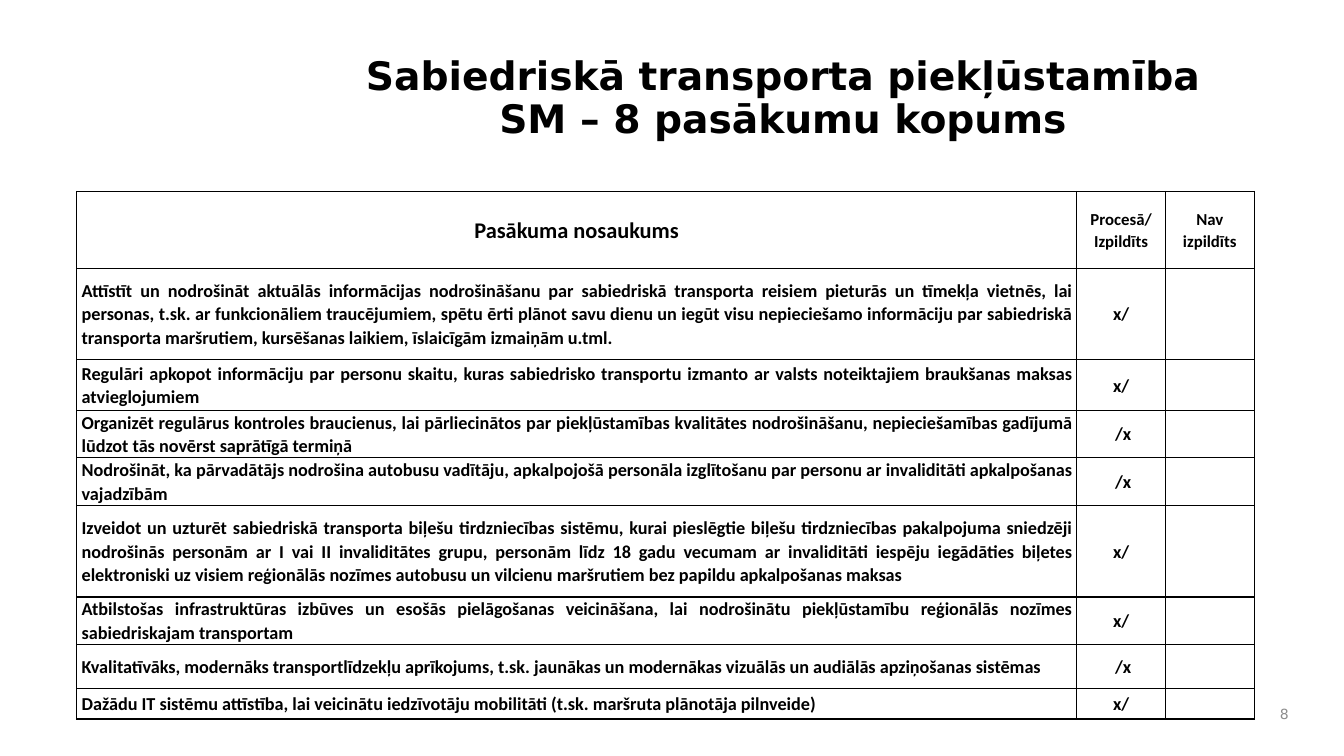
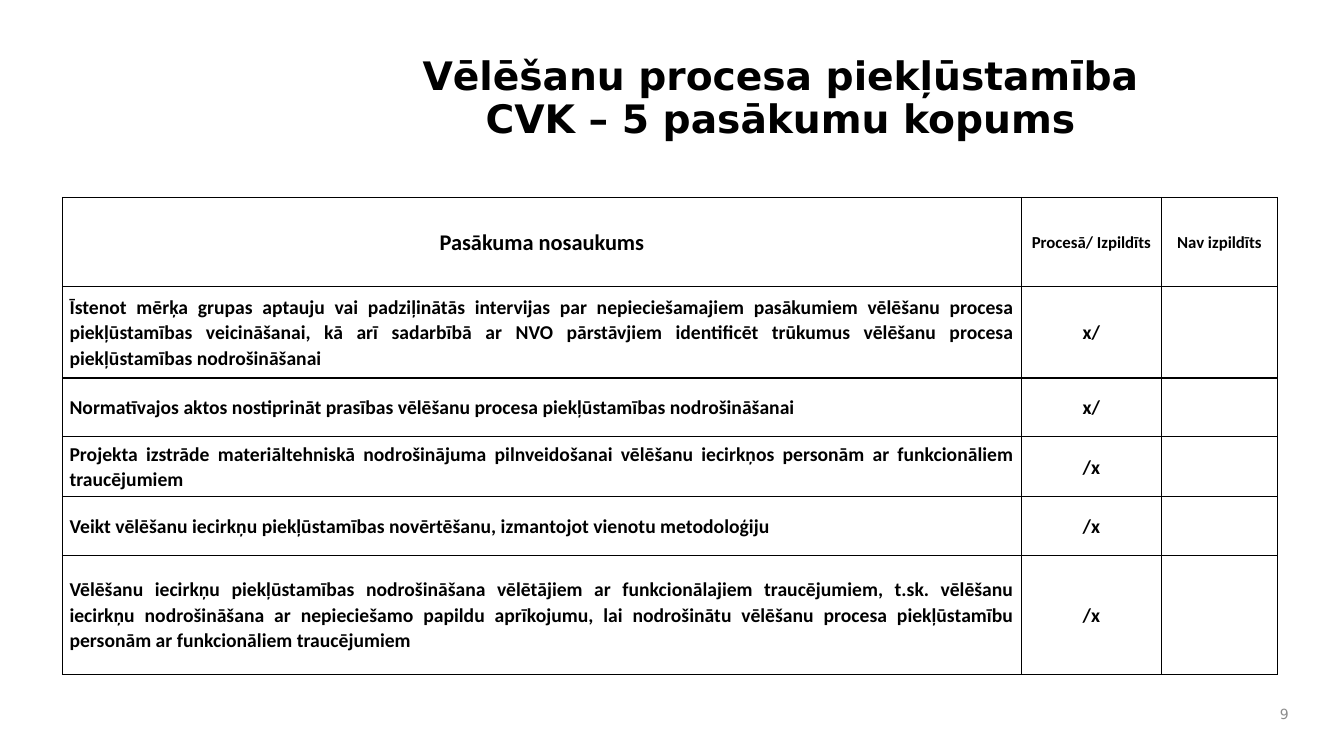
from lxml.etree import SubElement
from pptx import Presentation
from pptx.dml.color import RGBColor
from pptx.enum.text import MSO_ANCHOR as ANCHOR, MSO_AUTO_SIZE as AUTO, PP_ALIGN as ALIGN
from pptx.oxml.ns import qn
from pptx.util import Inches, Pt

BLACK, GRAY = "000000", "8C8C8C"
TITLE_FONT, TABLE_FONT = "DejaVu Sans", "Calibri"
HEADER = ("Pasākuma nosaukums", "Procesā/ Izpildīts", "Nav izpildīts")
HEADER_SIZES = (16, 12, 12)

SLIDES = [
    dict(
        number=8,
        title=("Sabiedriskā transporta piekļūstamība", "SM – 8 pasākumu kopums"),
        title_left=2.86, title_width=9.81,
        left=0.76, top=1.9, inset=0.05, size=13,
        cols=(9.92, 0.88, 0.88),
        heights=(0.76, 0.91, 0.5, 0.45, 0.45, 0.91, 0.46, 0.44, 0.3),
        rows=[
            ("Attīstīt un nodrošināt aktuālās informācijas nodrošināšanu par sabiedriskā transporta reisiem "
             "pieturās un tīmekļa vietnēs, lai personas, t.sk. ar funkcionāliem traucējumiem, spētu ērti plānot "
             "savu dienu un iegūt visu nepieciešamo informāciju par sabiedriskā transporta maršrutiem, "
             "kursēšanas laikiem, īslaicīgām izmaiņām u.tml.", "x/"),
            ("Regulāri apkopot informāciju par personu skaitu, kuras sabiedrisko transportu izmanto ar valsts "
             "noteiktajiem braukšanas maksas atvieglojumiem", "x/"),
            ("Organizēt regulārus kontroles braucienus, lai pārliecinātos par piekļūstamības kvalitātes "
             "nodrošināšanu, nepieciešamības gadījumā lūdzot tās novērst saprātīgā termiņā", " /x"),
            ("Nodrošināt, ka pārvadātājs nodrošina autobusu vadītāju, apkalpojošā personāla izglītošanu par "
             "personu ar invaliditāti apkalpošanas vajadzībām", " /x"),
            ("Izveidot un uzturēt sabiedriskā transporta biļešu tirdzniecības sistēmu, kurai pieslēgtie biļešu "
             "tirdzniecības pakalpojuma sniedzēji nodrošinās personām ar I vai II invaliditātes grupu, personām "
             "līdz 18 gadu vecumam ar invaliditāti iespēju iegādāties biļetes elektroniski uz visiem reģionālās "
             "nozīmes autobusu un vilcienu maršrutiem bez papildu apkalpošanas maksas", "x/"),
            ("Atbilstošas infrastruktūras izbūves un esošās pielāgošanas veicināšana, lai nodrošinātu "
             "piekļūstamību reģionālās nozīmes sabiedriskajam transportam", "x/"),
            ("Kvalitatīvāks, modernāks transportlīdzekļu aprīkojums, t.sk. jaunākas un modernākas vizuālās un "
             "audiālās apziņošanas sistēmas", " /x"),
            ("Dažādu IT sistēmu attīstība, lai veicinātu iedzīvotāju mobilitāti (t.sk. maršruta plānotāja "
             "pilnveide)", "x/"),
        ],
    ),
    dict(
        number=9,
        title=("Vēlēšanu procesa piekļūstamība", "CVK – 5 pasākumu kopums"),
        title_left=2.82, title_width=9.84,
        left=0.62, top=1.96, inset=0.07, size=14,
        cols=(9.51, 1.39, 1.15),
        heights=(0.88, 0.91, 0.58, 0.6, 0.58, 1.18),
        rows=[
            ("Īstenot mērķa grupas aptauju vai padziļinātās intervijas par nepieciešamajiem pasākumiem vēlēšanu "
             "procesa piekļūstamības veicināšanai, kā arī sadarbībā ar NVO pārstāvjiem identificēt trūkumus "
             "vēlēšanu procesa piekļūstamības nodrošināšanai", "x/"),
            ("Normatīvajos aktos nostiprināt prasības vēlēšanu procesa piekļūstamības nodrošināšanai", "x/"),
            ("Projekta izstrāde materiāltehniskā nodrošinājuma pilnveidošanai vēlēšanu iecirkņos personām ar "
             "funkcionāliem traucējumiem", "/x"),
            ("Veikt vēlēšanu iecirkņu piekļūstamības novērtēšanu, izmantojot vienotu metodoloģiju", "/x"),
            ("Vēlēšanu iecirkņu piekļūstamības nodrošināšana vēlētājiem ar funkcionālajiem traucējumiem, t.sk. "
             "vēlēšanu iecirkņu nodrošināšana ar nepieciešamo papildu aprīkojumu, lai nodrošinātu vēlēšanu "
             "procesa piekļūstamību personām ar funkcionāliem traucējumiem", "/x"),
        ],
    ),
]


def style(p, font, size, color, align, bold=False):
    p.alignment = align
    p.font.name, p.font.size, p.font.bold = font, Pt(size), bold
    p.font.color.rgb = RGBColor.from_string(color)


def add_borders(cell):
    tcPr = cell._tc.get_or_add_tcPr()
    for side in ("a:lnL", "a:lnR", "a:lnT", "a:lnB"):
        ln = SubElement(tcPr, qn(side), w=str(Pt(1)))
        SubElement(SubElement(ln, qn("a:solidFill")), qn("a:srgbClr"), val=BLACK)


prs = Presentation()
prs.slide_width, prs.slide_height = Inches(13.33), Inches(7.5)

for d in SLIDES:
    s = prs.slides.add_slide(prs.slide_layouts[5])
    title = s.shapes.title
    title.left, title.top = Inches(d["title_left"]), Inches(0.42)
    title.width, title.height = Inches(d["title_width"]), Inches(1.13)
    tf = title.text_frame
    tf.text = "\v".join(d["title"])
    tf.auto_size, tf.vertical_anchor = AUTO.NONE, ANCHOR.MIDDLE
    p = tf.paragraphs[0]
    p.line_spacing = 0.9
    style(p, TITLE_FONT, 28, BLACK, ALIGN.CENTER, True)

    heights, cols = d["heights"], d["cols"]
    table = s.shapes.add_table(len(heights), len(cols), Inches(d["left"]), Inches(d["top"]),
                               Inches(sum(cols)), Inches(sum(heights))).table
    table.horz_banding = False
    for column, width in zip(table.columns, cols):
        column.width = Inches(width)
    for row, height in zip(table.rows, heights):
        row.height = Inches(height)

    for i, texts in enumerate([HEADER] + [row + ("",) for row in d["rows"]]):
        for j, text in enumerate(texts):
            cell = table.cell(i, j)
            cell.text = text
            cell.vertical_anchor = ANCHOR.MIDDLE
            cell.margin_left = cell.margin_right = Inches(d["inset"])
            cell.margin_top = cell.margin_bottom = 0
            add_borders(cell)
            cell.fill.background()
            p = cell.text_frame.paragraphs[0]
            p.line_spacing, p.space_after = 1.07, Pt(4)
            size = d["size"] if i else HEADER_SIZES[j]
            style(p, TABLE_FONT, size, BLACK, ALIGN.JUSTIFY if i and j == 0 else ALIGN.CENTER, True)
            if not text:
                p._p.get_or_add_endParaRPr().set("sz", str(size * 100))

    tf = s.shapes.add_textbox(Inches(12.44), Inches(6.92), Inches(0.44), Inches(0.33)).text_frame
    tf.word_wrap, tf.vertical_anchor = True, ANCHOR.MIDDLE
    tf.text = str(d["number"])
    style(tf.paragraphs[0], TITLE_FONT, 10, GRAY, ALIGN.RIGHT)

prs.save("out.pptx")
